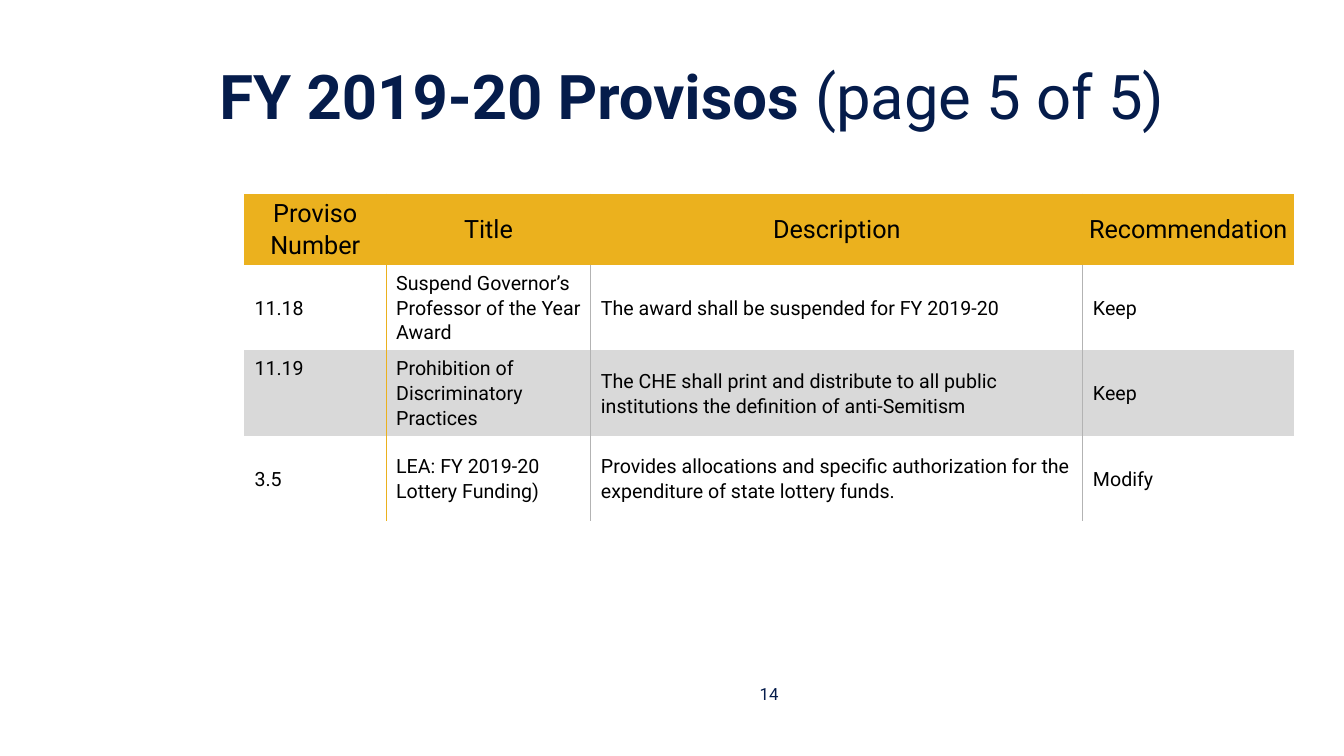
import pptx
import pptx.util
import pptx.dml.color
import pptx.enum.text
import pptx.oxml
import pptx.oxml.ns
from dataclasses import dataclass

Cm, Pt = pptx.util.Cm, pptx.util.Pt
Align = pptx.enum.text.PP_ALIGN
Anchor = pptx.enum.text.MSO_ANCHOR

TITLE = [("FY 2019-20 Provisos ", True), ("(page 5 of 5)", False)]
PAGE = "14"
HEADS = ["Proviso Number", "Title", "Description", "Recommendation"]
ROWS = [
    ("11.18", "Suspend Governor’s Professor of the Year Award",
     "The award shall be suspended for FY 2019-20", "Keep"),
    ("11.19", "Prohibition of Discriminatory Practices",
     "The CHE shall print and distribute to all public institutions "
     "the definition of anti-Semitism", "Keep"),
    ("3.5", "LEA: FY 2019‑20 Lottery Funding)",
     "Provides allocations and specific authorization for the "
     "expenditure of state lottery funds.", "Modify"),
]
RAISED = (2, 0)  # the one cell whose text sits at the top
WIDTHS = [3.57, 5.16, 12.4, 5.31]
HEAD_H, ROW_H = 1.6, 2.15
PLAIN = "{2D5ABB26-0587-4C30-8999-92F81FD0307C}"  # no style, no grid


@dataclass
class Theme:
    font: str = "Roboto"
    navy: str = "051C4B"
    gold: str = "EBB11E"
    band: str = "D9D9D9"
    rule: str = "B3B3B3"
    white: str = "FFFFFF"
    black: str = "000000"
    title: int = 44
    head: int = 18
    body: int = 14
    page: int = 12


T = Theme()


def rgb(code):
    return pptx.dml.color.RGBColor.from_string(code)


def style(para, size, color):
    para.font.name = T.font
    para.font.size = Pt(size)
    para.font.color.rgb = rgb(color)


def add_box(slide, left, top, width, height):
    """Add a wrapped, middle-anchored text box and return its paragraph."""
    box = slide.shapes.add_textbox(Cm(left), Cm(top), Cm(width), Cm(height))
    frame = box.text_frame
    frame.word_wrap = True
    frame.vertical_anchor = Anchor.MIDDLE
    return frame.paragraphs[0]


def add_edge(cell, side, color):
    """Draw one side (L or R) of a cell; call R before L."""
    line = pptx.oxml.parse_xml(
        f'<a:ln{side} {pptx.oxml.ns.nsdecls("a")} w="{Pt(0.75)}">'
        f'<a:solidFill><a:srgbClr val="{color}"/></a:solidFill></a:ln{side}>')
    cell._tc.get_or_add_tcPr().insert(0, line)


def fill_cell(cell, row, col, text):
    head = row == 0
    cell.text = text
    cell.vertical_anchor = Anchor.TOP if (row, col) == RAISED else Anchor.MIDDLE
    para = cell.text_frame.paragraphs[0]
    para.line_spacing = 1.07
    style(para, T.head if head else T.body, T.black)
    if head:
        para.alignment = Align.CENTER
        cell.margin_left = cell.margin_right = Cm(0.13)
        cell.margin_top = cell.margin_bottom = Cm(0.08)
    cell.fill.solid()
    shade = T.gold if head else T.white if row % 2 else T.band
    cell.fill.fore_color.rgb = rgb(shade)
    rules = [T.gold if head or n == 0 else T.rule
             for n in range(len(HEADS) - 1)]
    if col < len(rules):
        add_edge(cell, "R", rules[col])
    if col > 0:
        add_edge(cell, "L", rules[col - 1])


def add_grid(slide):
    data = [HEADS, *ROWS]
    frame = slide.shapes.add_table(
        len(data), len(HEADS), Cm(6.16), Cm(4.88),
        Cm(sum(WIDTHS)), Cm(HEAD_H + ROW_H * len(ROWS)))
    table = frame.table
    table.first_row = table.horz_banding = False
    table._tbl.tblPr.find(pptx.oxml.ns.qn("a:tableStyleId")).text = PLAIN
    for col, width in enumerate(WIDTHS):
        table.columns[col].width = Cm(width)
    for row, texts in enumerate(data):
        table.rows[row].height = Cm(ROW_H if row else HEAD_H)
        for col, text in enumerate(texts):
            fill_cell(table.cell(row, col), row, col, text)


def main():
    deck = pptx.Presentation()
    deck.slide_width, deck.slide_height = Cm(33.87), Cm(19.05)
    slide = deck.slides.add_slide(deck.slide_layouts[6])

    title = add_box(slide, 5.28, 0.8, 28.2, 3.18)
    for text, bold in TITLE:
        run = title.add_run()
        run.text = text
        run.font.bold = bold
    style(title, T.title, T.navy)

    add_grid(slide)

    page = add_box(slide, 18.52, 16.97, 1.73, 1.02)
    page.text = PAGE
    page.alignment = Align.CENTER
    style(page, T.page, T.navy)
    deck.save("out.pptx")


if __name__ == "__main__":
    main()
